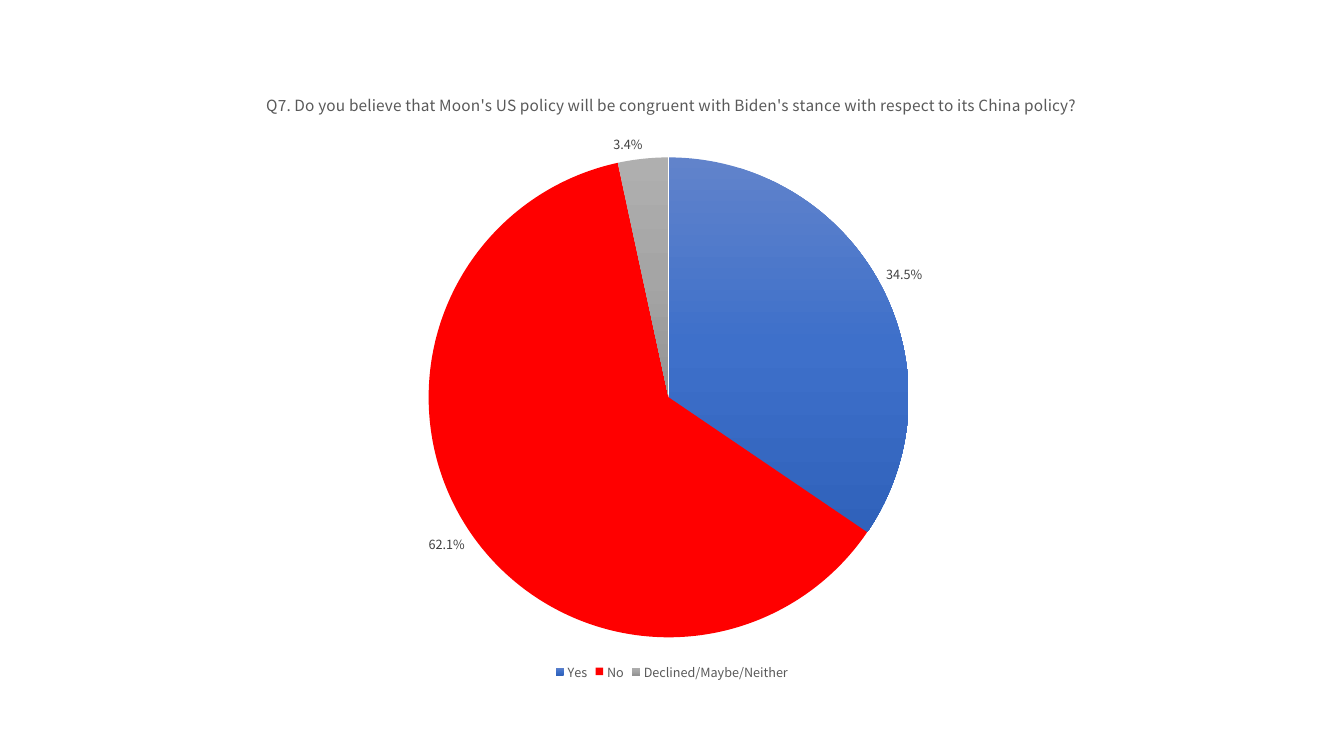
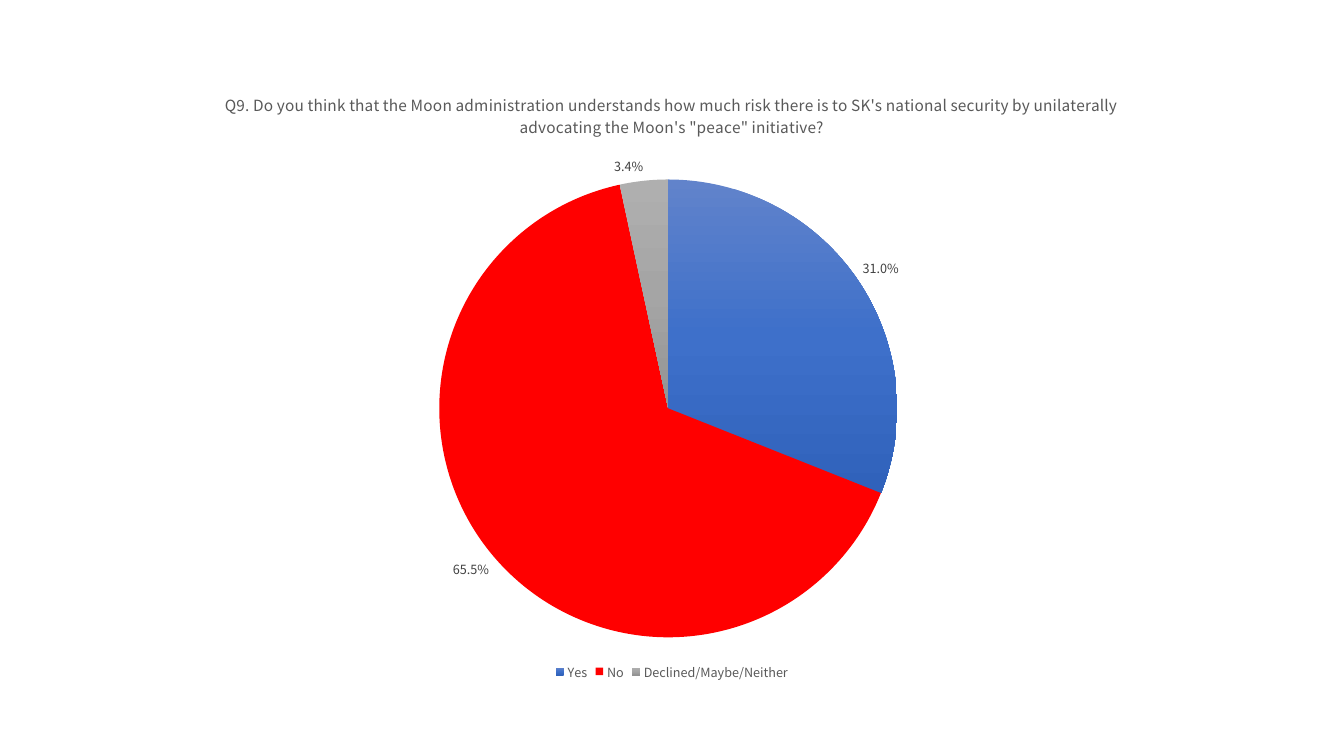
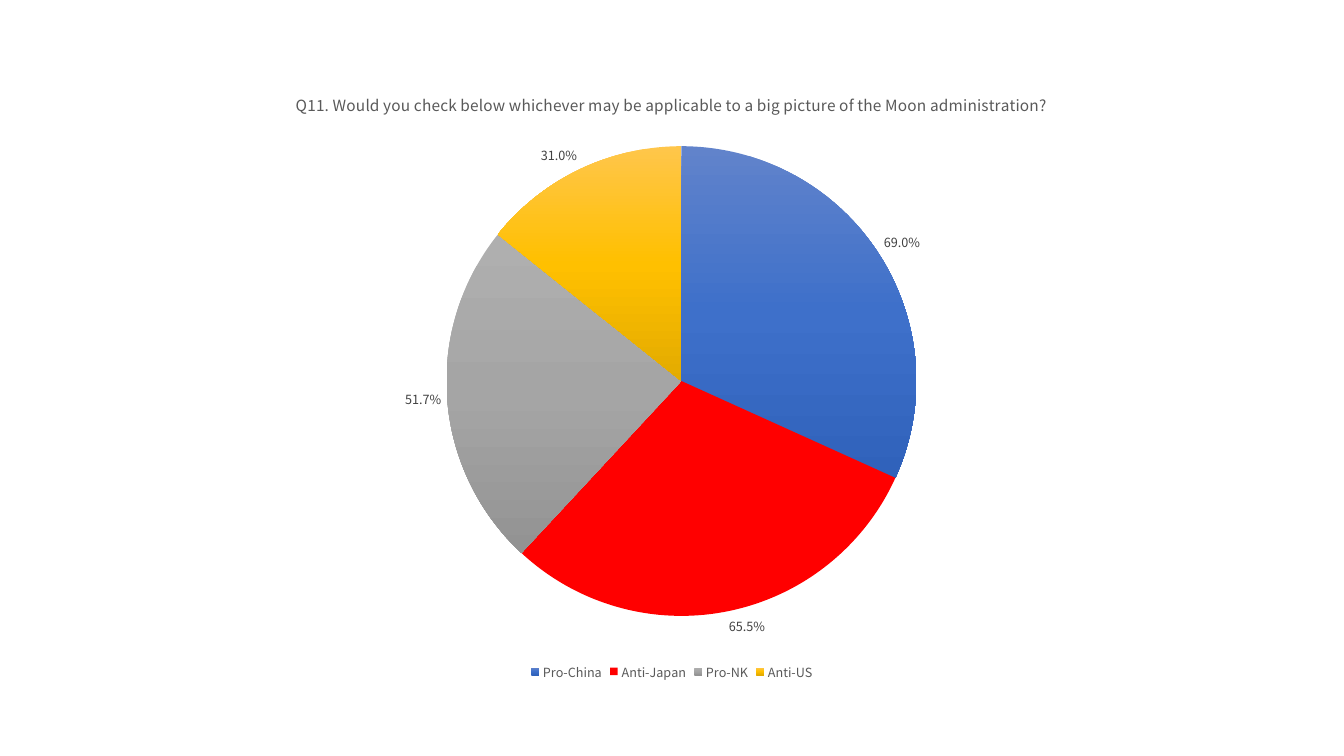
from copy import deepcopy
from dataclasses import dataclass

from pptx import Presentation
from pptx.chart.chart import Chart
from pptx.chart.data import CategoryChartData
from pptx.chart.point import Point
from pptx.dml.color import RGBColor
from pptx.enum.chart import XL_CHART_TYPE, XL_LABEL_POSITION, XL_LEGEND_POSITION
from pptx.slide import Slide
from pptx.text.text import Font
from pptx.util import Inches, Pt

PIE = XL_CHART_TYPE.PIE
OUTSIDE = XL_LABEL_POSITION.OUTSIDE_END
BOTTOM = XL_LEGEND_POSITION.BOTTOM

BLACK = RGBColor(0x00, 0x00, 0x00)
TITLE_GRAY = RGBColor(0x59, 0x59, 0x59)
LABEL_GRAY = RGBColor(0x40, 0x40, 0x40)
RED = RGBColor(0xFF, 0x00, 0x00)
BLUES = (RGBColor(0x61, 0x83, 0xCB), RGBColor(0x3E, 0x70, 0xCA), RGBColor(0x30, 0x62, 0xBB))
GRAYS = (RGBColor(0xAF, 0xAF, 0xAF), RGBColor(0xA5, 0xA5, 0xA5), RGBColor(0x93, 0x93, 0x93))
GOLDS = (RGBColor(0xFF, 0xC6, 0x4B), RGBColor(0xFF, 0xC0, 0x00), RGBColor(0xE3, 0xAB, 0x00))
SLICE_COLORS = (BLUES, (RED,), GRAYS, GOLDS)

FONT_NAME = "Noto Sans CJK KR"
PERCENT = "0.0%"
SLIDE_WIDTH, SLIDE_HEIGHT = Inches(13.33), Inches(7.5)
MARGIN = Inches(0.7)
CHART_WIDTH = SLIDE_WIDTH - 2 * MARGIN
CHART_HEIGHT = Inches(6.09)
BLANK_LAYOUT = 6


@dataclass(frozen=True)
class Question:
    number: str
    wording: str
    answers: tuple[str, ...]
    shares: tuple[float, ...]


YES_NO = ("Yes", "No", "Declined/Maybe/Neither")
QUESTIONS = (
    Question(
        "Q7.",
        "Do you believe that Moon's US policy will be congruent with Biden's stance "
        "with respect to its China policy?",
        YES_NO,
        (0.345, 0.621, 0.034),
    ),
    Question(
        "Q9.",
        "Do you think that the Moon administration understands how much risk there is "
        "to SK's national security by unilaterally advocating the Moon's \"peace\" initiative?",
        YES_NO,
        (0.31, 0.655, 0.034),
    ),
    Question(
        "Q11.",
        "Would you check below whichever may be applicable to a big picture of "
        "the Moon administration?",
        ("Pro-China", "Anti-Japan", "Pro-NK", "Anti-US"),
        (0.69, 0.655, 0.517, 0.31),
    ),
)


def style_font(font: Font, size: float, color: RGBColor) -> None:
    font.name = FONT_NAME
    font.size = Pt(size)
    font.bold = False
    font.color.rgb = color


def paint_slice(chart: Chart, point: Point, colors: tuple[RGBColor, ...]) -> None:
    point.format.line.fill.background()
    fill = point.format.fill
    if len(colors) == 1:
        fill.solid()
        fill.fore_color.rgb = colors[0]
        return
    fill.gradient()
    fill.gradient_angle = 270
    stop_list = chart._chartSpace.xpath(".//a:gsLst")[-1]
    stop_list.insert(1, deepcopy(stop_list[0]))
    for stop, color, position in zip(fill.gradient_stops, colors, (0, 0.5, 1)):
        stop.color.rgb = color
        stop.position = position


def write_title(chart: Chart, question: Question) -> None:
    chart.has_title = True
    chart.chart_title.include_in_layout = False
    paragraph = chart.chart_title.text_frame.paragraphs[0]
    for text in (f"{question.number} ", question.wording):
        run = paragraph.add_run()
        run.text = text
        style_font(run.font, 11, TITLE_GRAY)


def draw_question(slide: Slide, question: Question) -> None:
    results = CategoryChartData(number_format=PERCENT)
    results.categories = question.answers
    results.add_series(f"{question.number} {question.wording}", question.shares)
    chart = slide.shapes.add_chart(
        PIE, MARGIN, MARGIN, CHART_WIDTH, CHART_HEIGHT, results
    ).chart
    style_font(chart.font, 10, BLACK)
    write_title(chart, question)

    chart.has_legend = True
    chart.legend.position = BOTTOM
    chart.legend.include_in_layout = False
    style_font(chart.legend.font, 9, TITLE_GRAY)

    pie = chart.plots[0]
    pie.vary_by_categories = True
    answers = pie.series[0]
    for index, colors in enumerate(SLICE_COLORS[:len(question.answers)]):
        paint_slice(chart, answers.points[index], colors)

    labels = answers.data_labels
    labels.show_value = True
    labels.show_percentage = False
    labels.number_format = PERCENT
    labels.number_format_is_linked = False
    labels.position = OUTSIDE
    style_font(labels.font, 9, LABEL_GRAY)


def main() -> None:
    deck = Presentation()
    deck.slide_width, deck.slide_height = SLIDE_WIDTH, SLIDE_HEIGHT
    for question in QUESTIONS:
        draw_question(deck.slides.add_slide(deck.slide_layouts[BLANK_LAYOUT]), question)
    deck.save("out.pptx")


if __name__ == "__main__":
    main()
